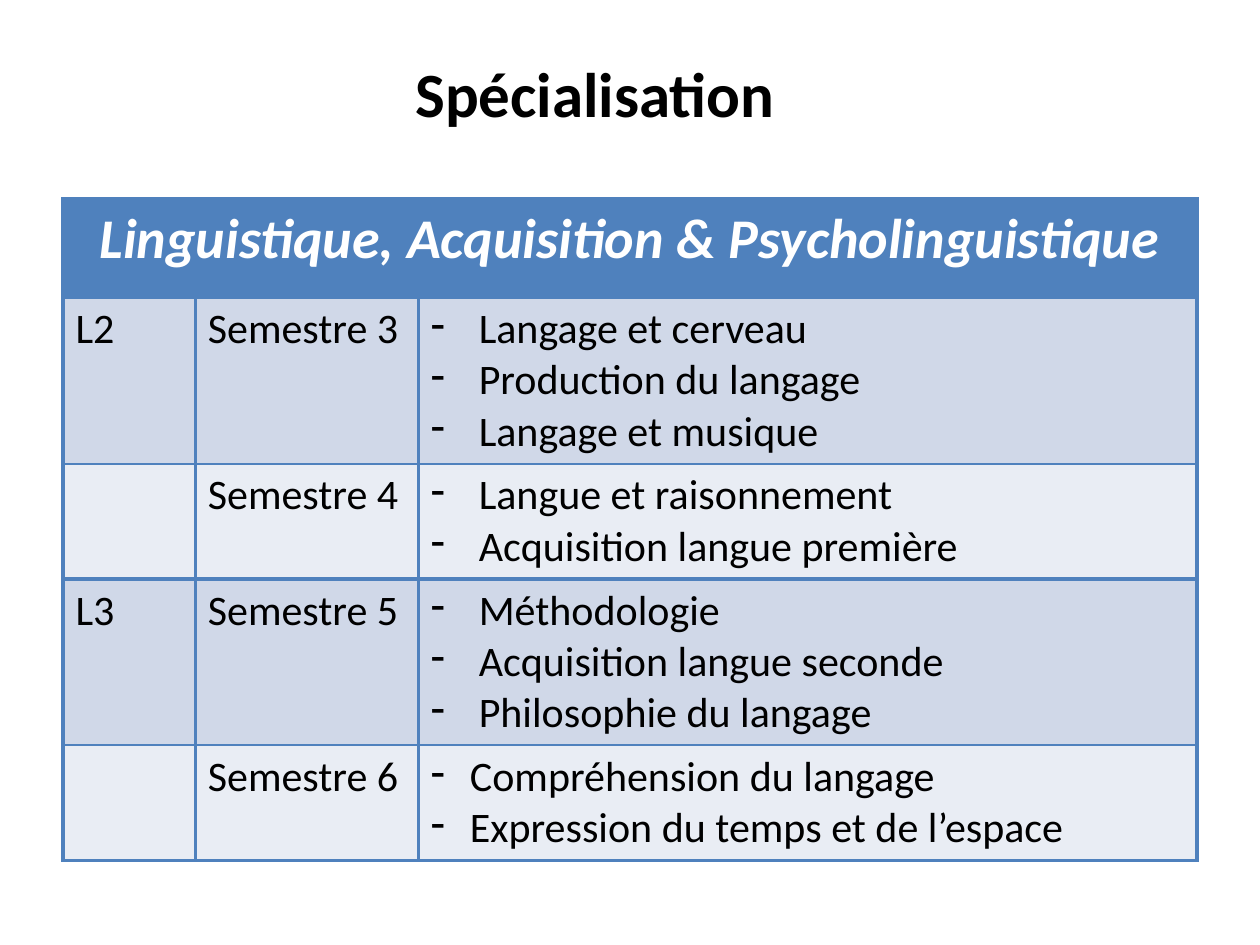
from dataclasses import dataclass

import pptx
import pptx.dml.color
import pptx.enum.text
import pptx.oxml.ns
import pptx.util
from lxml import etree

Inches = pptx.util.Inches
Pt = pptx.util.Pt
CENTER = pptx.enum.text.PP_ALIGN.CENTER

FONT = "Calibri"
BLACK = "000000"
WHITE = "FFFFFF"
BLUE = "4F81BD"
BANDS = ("D0D8E8", "E9EDF4")
COLUMN_WIDTHS = (1.05, 1.77, 6.18)
HEADER_HEIGHT = 0.78
ROW_HEIGHT = 0.86


@dataclass
class Semester:
    level: str
    name: str
    courses: tuple[str, ...]
    indent: float = 0.38


SEMESTERS = (
    Semester("L2", "Semestre 3",
             ("Langage et cerveau", "Production du langage", "Langage et musique")),
    Semester("", "Semestre 4",
             ("Langue et raisonnement", "Acquisition langue première")),
    Semester("L3", "Semestre 5",
             ("Méthodologie", "Acquisition langue seconde", "Philosophie du langage")),
    Semester("", "Semestre 6",
             ("Compréhension du langage", "Expression du temps et de l’espace"), 0.31),
)


def rgb(color: str) -> pptx.dml.color.RGBColor:
    return pptx.dml.color.RGBColor.from_string(color)


def add_element(parent, tag: str, **attributes: str):
    element = etree.SubElement(parent, pptx.oxml.ns.qn(tag))
    for name, value in attributes.items():
        element.set(name, value)
    return element


def format_font(font, size: float, color: str = BLACK,
                bold: bool = False, italic: bool = False) -> None:
    font.name = FONT
    font.size = Pt(size)
    font.color.rgb = rgb(color)
    font.bold = bold
    font.italic = italic


def style_cell(cell, fill: str, top: float = 2.25, bottom: float = 2.25) -> None:
    """Draw the borders, then the fill, in the order the schema requires."""
    properties = cell._tc.get_or_add_tcPr()
    for side, width in (("L", 2.25), ("R", 2.25), ("T", top), ("B", bottom)):
        line = add_element(properties, f"a:ln{side}", w=str(Pt(width)))
        add_element(add_element(line, "a:solidFill"), "a:srgbClr", val=BLUE)
    cell.fill.solid()
    cell.fill.fore_color.rgb = rgb(fill)


def add_dash(paragraph, indent: float) -> None:
    properties = paragraph._p.get_or_add_pPr()
    properties.set("marL", str(Inches(indent)))
    properties.set("indent", str(-Inches(indent)))
    add_element(properties, "a:buFontTx")
    add_element(properties, "a:buChar", char="-")


def fill_cell(cell, lines: tuple[str, ...], indent: float = 0) -> None:
    cell.text = "\n".join(lines)
    for paragraph in cell.text_frame.paragraphs:
        if indent:
            add_dash(paragraph, indent)
        format_font(paragraph.font, 24)


def add_title(slide) -> None:
    title = slide.shapes.title
    title.left, title.top = Inches(0.28), Inches(0.29)
    title.width, title.height = Inches(9), Inches(0.88)
    title.text_frame.text = "Spécialisation "
    paragraph = title.text_frame.paragraphs[0]
    paragraph.alignment = CENTER
    format_font(paragraph.font, 36, bold=True)


def add_programme(slide) -> None:
    frame = slide.shapes.add_table(
        len(SEMESTERS) + 1, len(COLUMN_WIDTHS),
        Inches(0.5), Inches(1.58), Inches(9), Inches(5.18))
    table = frame.table
    for column, width in zip(table.columns, COLUMN_WIDTHS):
        column.width = Inches(width)
    for index, row in enumerate(table.rows):
        row.height = Inches(ROW_HEIGHT if index else HEADER_HEIGHT)
    frame.height = Inches(5.18)

    header = table.cell(0, 0)
    header.merge(table.cell(0, len(COLUMN_WIDTHS) - 1))
    for cell in table.rows[0].cells:
        style_cell(cell, BLUE)
    header.text = "Linguistique, Acquisition & Psycholinguistique"
    paragraph = header.text_frame.paragraphs[0]
    paragraph.alignment = CENTER
    format_font(paragraph.font, 32, WHITE, bold=True, italic=True)

    for index, semester in enumerate(SEMESTERS):
        level, name, courses = table.rows[index + 1].cells
        fill_cell(level, (semester.level,))
        fill_cell(name, (semester.name,))
        fill_cell(courses, semester.courses, semester.indent)
        band = index % 2
        for cell in (level, name, courses):
            style_cell(cell, BANDS[band],
                       top=1.5 if band else 2.25, bottom=2.25 if band else 1.5)


def main() -> None:
    presentation = pptx.Presentation()
    presentation.slide_width = Inches(10)
    presentation.slide_height = Inches(7.5)
    slide = presentation.slides.add_slide(presentation.slide_layouts[5])
    add_title(slide)
    add_programme(slide)
    presentation.save("out.pptx")


if __name__ == "__main__":
    main()
